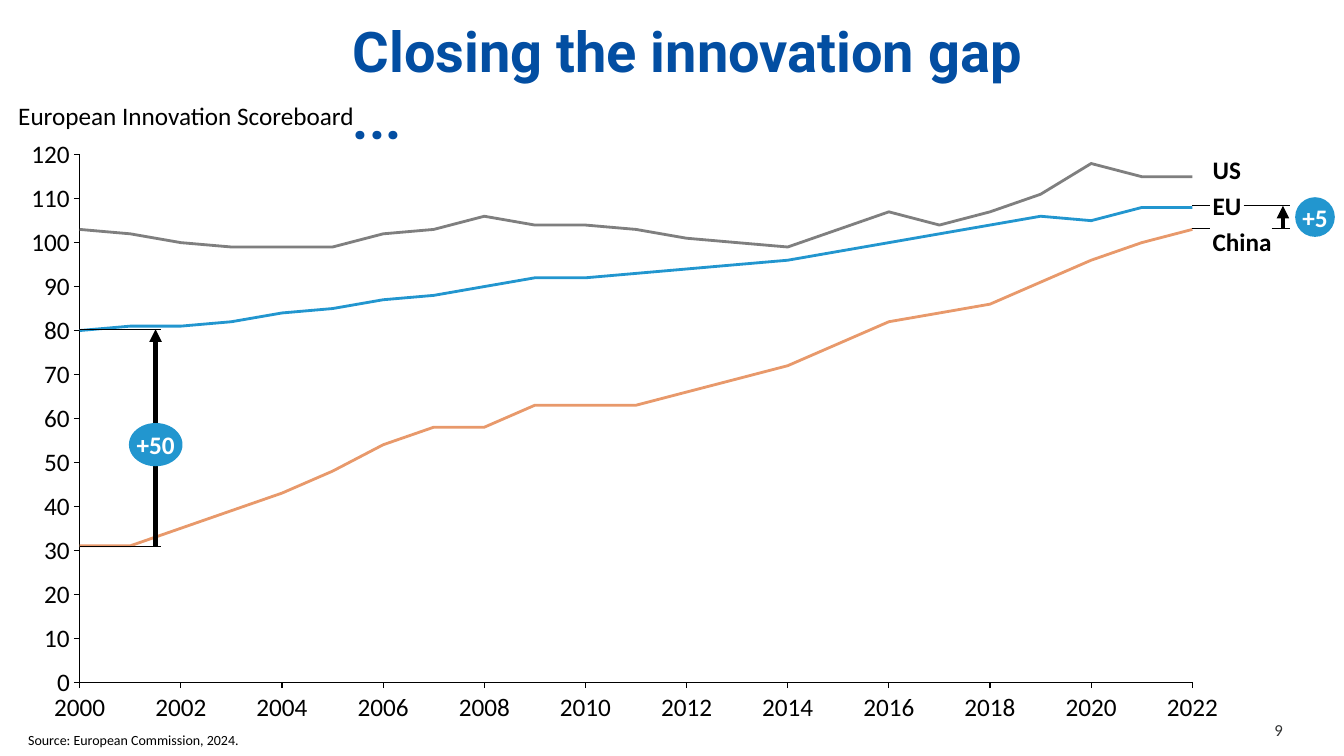
from pptx import Presentation
from pptx import util as u
from pptx.chart import data
from pptx.dml.color import RGBColor
from pptx.enum import chart as charts, shapes, text
from pptx.oxml import parse_xml
from pptx.oxml.ns import nsdecls, qn
from lxml import etree

COLORS = {"black": "000000", "white": "FFFFFF", "title": "034EA2", "number": "323333",
          "eu": "2296CF", "us": "7F7F7F", "china": "E8996B"}
FORMATS = {
    "title": {"name": "Roboto", "size": u.Pt(40), "bold": True},
    "body": {"name": "Calibri", "size": u.Pt(18), "bold": False},
    "strong": {"name": "Calibri", "size": u.Pt(18), "bold": True},
    "number": {"name": "Calibri", "size": u.Pt(12), "bold": False},
    "source": {"name": "Calibri", "size": u.Pt(10), "bold": False},
}
MARGINS = ("margin_left", "margin_top", "margin_right", "margin_bottom")
FLUSH = dict.fromkeys(MARGINS, 0)

YEARS = range(2000, 2023)
SCORES = {
    "eu": (80, 81, 81, 82, 84, 85, 87, 88, 90, 92, 92, 93,
           94, 95, 96, 98, 100, 102, 104, 106, 105, 108, 108),
    "us": (103, 102, 100, 99, 99, 99, 102, 103, 106, 104, 104, 103,
           101, 100, 99, 103, 107, 104, 107, 111, 118, 115, 115),
    "china": (31, 31, 35, 39, 43, 48, 54, 58, 58, 63, 63, 63,
              66, 69, 72, 77, 82, 84, 86, 91, 96, 100, 103),
}
TOP_SCORE = 120
CHART_BOX = (0, 3.18, 31.39, 15.82)
PLOT_BOX = (2.01, 3.9, 28.04, 13.29)


def rgb(color):
    return RGBColor.from_string(COLORS[color])


def cm(box):
    return [u.Cm(length) for length in box]


def apply(target, values):
    for name, value in values.items():
        setattr(target, name, value)


def write(shape, words, style, color, align=text.PP_ALIGN.LEFT, **frame_values):
    frame = shape.text_frame
    apply(frame, {"word_wrap": True, **frame_values})
    para = frame.paragraphs[0]
    para.alignment = align
    span = para.add_run()
    span.text = words
    apply(span.font, FORMATS[style])
    span.font.color.rgb = rgb(color)


def add_text(page, box, *args, **values):
    write(page.shapes.add_textbox(*cm(box)), *args, **values)


def add_line(page, start, end, width=0.75, arrow=False):
    line = page.shapes.add_connector(shapes.MSO_CONNECTOR.STRAIGHT, *cm(start + end))
    line.line.color.rgb = rgb("black")
    line.line.width = u.Pt(width)
    if arrow:
        etree.SubElement(line.line._get_or_add_ln(), qn("a:tailEnd"), type="triangle")
    etree.SubElement(line._element.spPr, qn("a:effectLst"))


def score_y(box, score):
    return box[1] + box[3] * (1 - score / TOP_SCORE)


def format_axis(axis, low, high, step, number_format):
    apply(axis, {"minimum_scale": low, "maximum_scale": high, "major_unit": step,
                 "has_major_gridlines": False, "has_title": False,
                 "major_tick_mark": charts.XL_TICK_MARK.OUTSIDE,
                 "minor_tick_mark": charts.XL_TICK_MARK.NONE})
    apply(axis.tick_labels, {"number_format": number_format,
                             "number_format_is_linked": False})
    apply(axis.tick_labels.font, FORMATS["body"])
    axis.tick_labels.font.color.rgb = rgb("black")
    axis.format.line.color.rgb = rgb("black")
    axis.format.line.width = u.Pt(0.75)


def place_plot(chart, box, plot):
    values = {"x": (plot[0] - box[0]) / box[2], "y": (plot[1] - box[1]) / box[3],
              "w": plot[2] / box[2], "h": plot[3] / box[3]}
    parts = "".join(f'<c:{key} val="{value:.4f}"/>' for key, value in values.items())
    layout = parse_xml(
        f'<c:layout {nsdecls("c")}><c:manualLayout><c:layoutTarget val="inner"/>'
        f'<c:xMode val="edge"/><c:yMode val="edge"/>{parts}</c:manualLayout></c:layout>')
    area = chart._chartSpace.chart.plotArea
    for old in area.findall(qn("c:layout")):
        area.remove(old)
    area.insert(0, layout)


def add_score_chart(page, box, plot):
    scores = data.XyChartData()
    for region, values in SCORES.items():
        series = scores.add_series(region)
        for year, value in zip(YEARS, values):
            series.add_data_point(year, value)
    chart = page.shapes.add_chart(
        charts.XL_CHART_TYPE.XY_SCATTER_LINES_NO_MARKERS, *cm(box), scores).chart
    apply(chart, {"has_legend": False, "has_title": False})
    apply(chart.font, FORMATS["source"])
    chart.font.color.rgb = rgb("black")
    chart.plots[0].vary_by_categories = False
    for region, series in zip(SCORES, chart.plots[0].series):
        series.smooth = False
        series.marker.style = charts.XL_MARKER_STYLE.NONE
        series.format.line.color.rgb = rgb(region)
        series.format.line.width = u.Pt(2)
    format_axis(chart.category_axis, YEARS[0], YEARS[-1], 2, '0;"-"0')
    format_axis(chart.value_axis, 0, TOP_SCORE, 10, '#,##0;"-"#,##0')
    place_plot(chart, box, plot)


def add_gap(page, box, levels, arrow_x):
    for score, pieces in levels.items():
        y = score_y(box, score)
        for left, right in pieces:
            add_line(page, (left, y), (right, y))
    low, high = (score_y(box, score) for score in levels)
    add_line(page, (arrow_x, low), (arrow_x, high), 3, arrow=True)


def add_bubble(page, box, words):
    bubble = page.shapes.add_shape(shapes.MSO_SHAPE.OVAL, *cm(box))
    bubble.shadow.inherit = False
    bubble.fill.solid()
    bubble.fill.fore_color.rgb = rgb("eu")
    bubble.line.fill.background()
    write(bubble, words, "strong", "white", text.PP_ALIGN.CENTER, **FLUSH,
          word_wrap=False, vertical_anchor=text.MSO_ANCHOR.MIDDLE)


def add_gaps(page, box):
    left, right = box[0], box[0] + box[2]
    start, stub, rest = (left, left + 2.05), (right, right + 0.45), right + 2.46
    add_gap(page, box, {30.8: [start], 80.3: [start]}, left + 1.91)
    add_gap(page, box, {103.2: [stub, (right + 2, rest)],
                        108.4: [stub, (right + 1.29, rest)]}, right + 2.28)
    add_bubble(page, (left + 1.24, box[1] + 6.76, 1.35, 1.09), "+50")
    add_bubble(page, (right + 2.59, box[1] + 1.07, 1, 1), "+5")


def add_region_labels(page, box):
    for row, region in enumerate(("US", "EU", "China")):
        place = (box[0] + box[2] + 0.51, box[1] + row * 0.9, 1.8, 0.76)
        add_text(page, place, region, "strong", "black", **FLUSH,
                 vertical_anchor=text.MSO_ANCHOR.MIDDLE)


def add_heading(page, box):
    left, top, width, height = box
    add_text(page, (left + 8.18, top, 17.5, 1.96), "Closing the innovation gap ...",
             "title", "title")
    add_text(page, (left, top + 2.26, width, height - 2.26),
             "European Innovation Scoreboard", "body", "black", **FLUSH)


def add_footer(page, box):
    left, top, width, height = box
    add_text(page, (left, top + 0.17, 30.1, 0.69), "Source: European Commission, 2024.",
             "source", "black")
    add_text(page, (left + width - 0.91, top, 0.91, 0.51), "9", "number", "number",
             text.PP_ALIGN.RIGHT, **FLUSH, vertical_anchor=text.MSO_ANCHOR.BOTTOM)


def main():
    deck = Presentation()
    deck.slide_width, deck.slide_height = u.Cm(33.87), u.Cm(19.05)
    page = deck.slides.add_slide(deck.slide_layouts[6])
    add_footer(page, (0.46, 18.14, 31.87, 0.86))
    add_score_chart(page, CHART_BOX, PLOT_BOX)
    add_gaps(page, PLOT_BOX)
    add_region_labels(page, PLOT_BOX)
    add_heading(page, (0.46, 0.28, 25.68, 3.25))
    deck.save("out.pptx")


if __name__ == "__main__":
    main()
